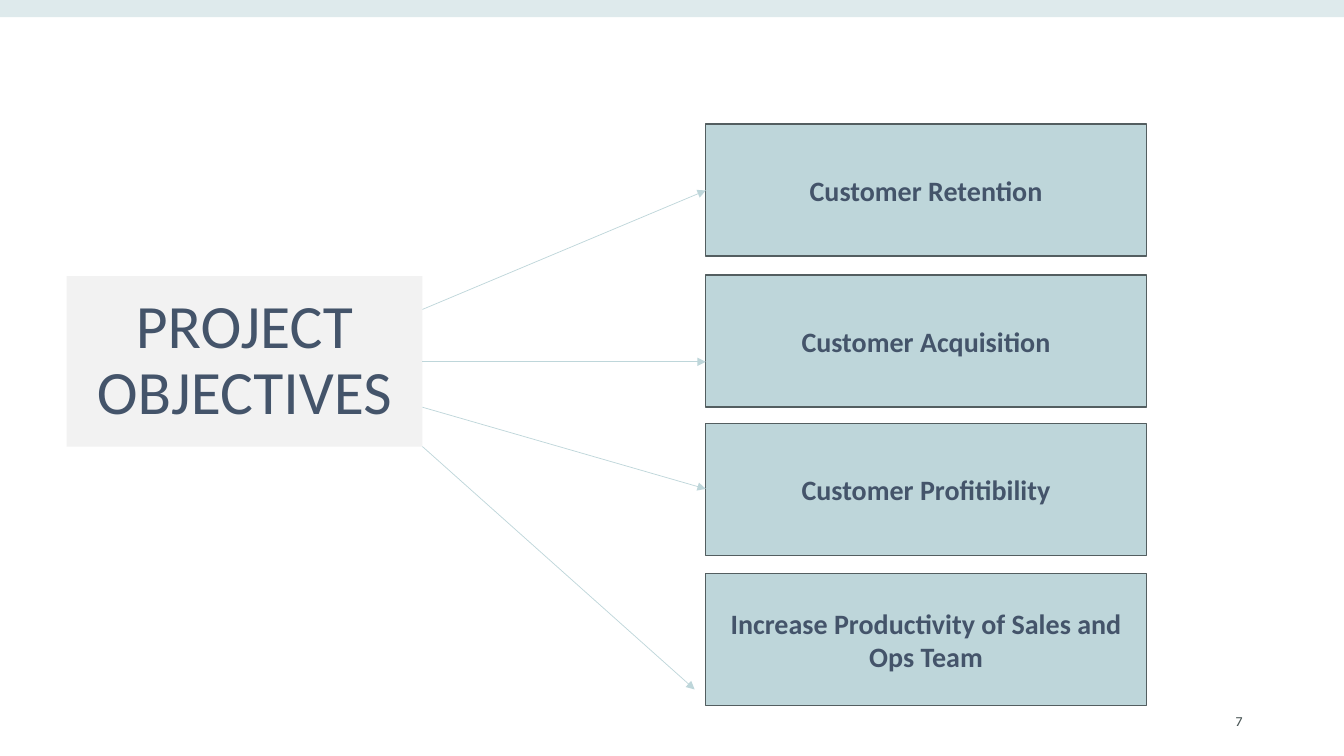
from lxml import etree
from pptx import Presentation
from pptx.dml.color import RGBColor
from pptx.enum.shapes import MSO_CONNECTOR, MSO_SHAPE
from pptx.enum.text import MSO_ANCHOR, MSO_AUTO_SIZE, PP_ALIGN
from pptx.oxml.ns import qn
from pptx.util import Inches, Pt

RECTANGLE = MSO_SHAPE.RECTANGLE
STRAIGHT = MSO_CONNECTOR.STRAIGHT
MIDDLE = MSO_ANCHOR.MIDDLE
CENTER, RIGHT = PP_ALIGN.CENTER, PP_ALIGN.RIGHT
TEAL, SLATE, OUTLINE, PALE_GREY, NUMBER_GREY = (
    "BED6DA", "44546A", "535E60", "F2F2F2", "4A5656")


def color(hex_string):
    return RGBColor.from_string(hex_string)


def write_text(shape, text, alignment, font_color, **font_values):
    """Put one vertically centred paragraph in the shape and return it."""
    frame = shape.text_frame
    frame.word_wrap = True
    frame.auto_size = MSO_AUTO_SIZE.NONE
    frame.vertical_anchor = MIDDLE
    frame.text = text
    paragraph = frame.paragraphs[0]
    paragraph.alignment = alignment
    font = paragraph.runs[0].font
    font.color.rgb = color(font_color)
    for name, value in font_values.items():
        setattr(font, name, value)
    return paragraph


presentation = Presentation()
presentation.slide_width = Inches(13.33)
presentation.slide_height = Inches(7.5)
slide = presentation.slides.add_slide(presentation.slide_layouts[5])
shapes = slide.shapes

# Half-transparent band along the top
band = shapes.add_shape(RECTANGLE, 0, 0, presentation.slide_width, Inches(0.17))
band.shadow.inherit = False
band.fill.solid()
band.fill.fore_color.rgb = color(TEAL)
band.line.fill.background()
band_color = band.fill._xPr.find(qn("a:solidFill")).find(qn("a:srgbClr"))
etree.SubElement(band_color, qn("a:alpha"), val="50000")

# Title block
title = shapes.title
title_place = {"left": 0.66, "top": 2.74, "width": 3.53, "height": 1.69}
for name, value in title_place.items():
    setattr(title, name, Inches(value))
title.fill.solid()
title.fill.fore_color.rgb = color(PALE_GREY)
title_paragraph = write_text(title, "PROJECT OBJECTIVES", CENTER, SLATE,
                             name="Calibri", size=Pt(44))
title_paragraph.line_spacing = 0.9

# Slide number
number_box = shapes.add_textbox(Inches(9.42), Inches(6.95), Inches(3), Inches(0.4))
number_paragraph = write_text(number_box, "7", RIGHT, NUMBER_GREY,
                              name="Karla", size=Pt(10))
number_paragraph.runs[0].font._element.set("spc", "150")

# Objectives: text, box top, arrow start height, arrow tip
title_right = title_place["left"] + title_place["width"]
box_left, box_width, box_height = 7, 4.37, 1.31
objectives = [
    ("Customer Retention", 1.23, 3.07, (box_left, 1.89)),
    ("Customer Acquisition", 2.73, 3.59, (box_left, 3.59)),
    ("Customer Profitibility", 4.2, 4.04, (box_left, 4.85)),
    ("Increase Productivity of Sales and Ops Team", 5.69, 4.43, (6.89, 6.84)),
]
for text, box_top, start_height, (tip_left, tip_top) in objectives:
    box = shapes.add_shape(RECTANGLE, Inches(box_left), Inches(box_top),
                           Inches(box_width), Inches(box_height))
    box.shadow.inherit = False
    box.fill.solid()
    box.fill.fore_color.rgb = color(TEAL)
    box.line.color.rgb = color(OUTLINE)
    box.line.width = Pt(1)
    write_text(box, text, CENTER, SLATE, name="Calibri", size=Pt(20), bold=True)

    arrow = shapes.add_connector(STRAIGHT, Inches(title_right), Inches(start_height),
                                 Inches(tip_left), Inches(tip_top))
    arrow.line.color.rgb = color(TEAL)
    arrow.line.width = Pt(0.5)
    etree.SubElement(arrow.line._get_or_add_ln(), qn("a:tailEnd"), type="triangle")
    etree.SubElement(arrow._element.spPr, qn("a:effectLst"))

presentation.save("out.pptx")
